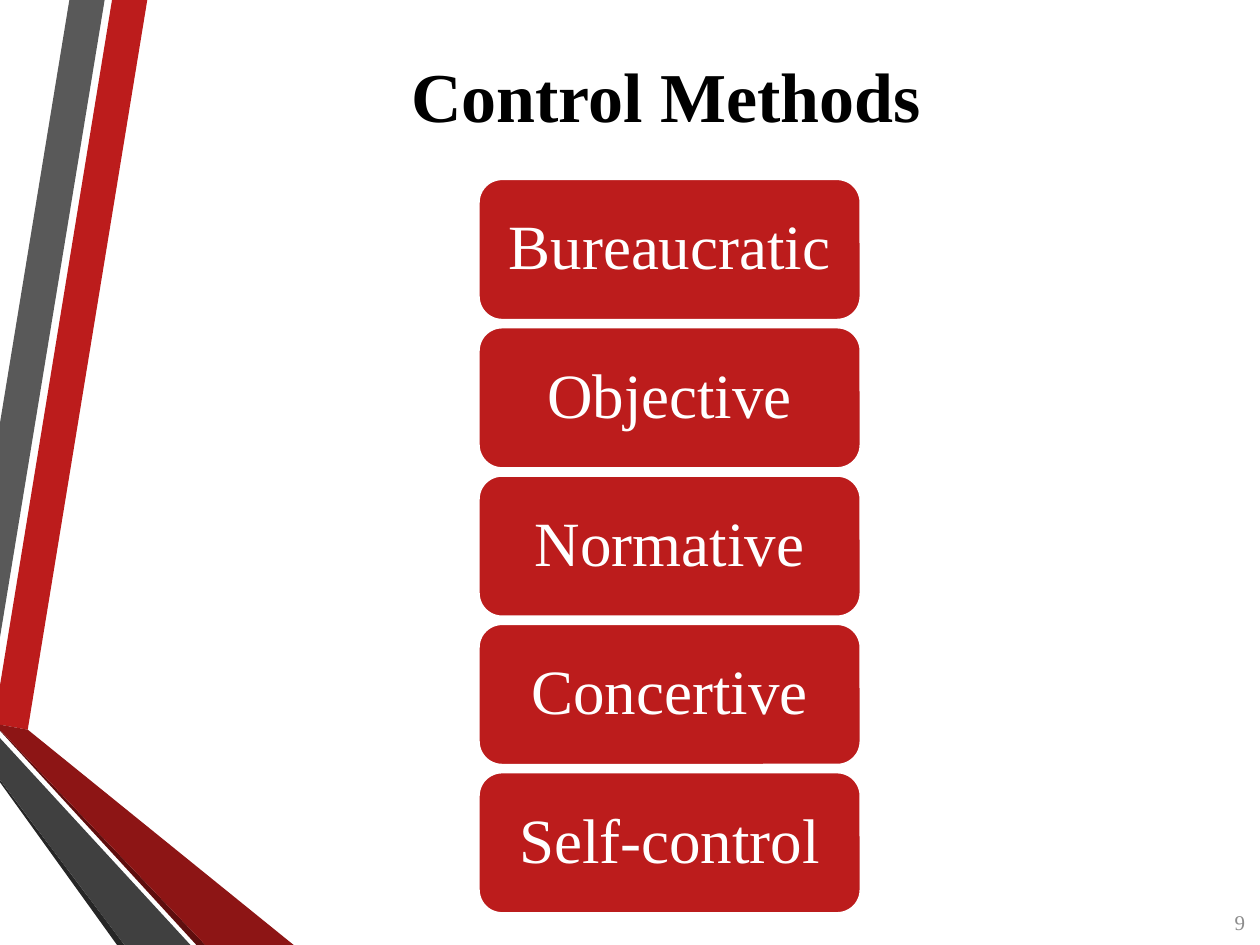
from pptx import Presentation
from pptx.dml.color import RGBColor
from pptx.enum.shapes import MSO_SHAPE
from pptx.enum.text import MSO_ANCHOR, PP_ALIGN
from pptx.util import Cm, Pt

ROUNDED = MSO_SHAPE.ROUNDED_RECTANGLE
MIDDLE = MSO_ANCHOR.MIDDLE
CENTER, RIGHT = PP_ALIGN.CENTER, PP_ALIGN.RIGHT

COLORS = {
    "red": "BC1C1C",
    "dark red": "8D1515",
    "deep red": "5E0E0E",
    "grey": "595959",
    "dark grey": "404040",
    "deep grey": "262626",
    "page grey": "8C8C8C",
    "black": "000000",
    "white": "FFFFFF",
}

RIBBONS = [
    ("red", [(0, 13.82), (0, 14.61), (0.56, 14.71), (2.97, 0), (2.26, 0)]),
    ("grey", [(2.11, 0), (1.4, 0), (0, 8.53), (0, 12.85)]),
    ("deep grey", [(0, 15.72), (0, 15.77), (2.36, 19.05), (2.51, 19.05)]),
    ("deep red", [(0, 14.71), (0, 14.73), (3.96, 19.05), (4.14, 19.05)]),
    ("dark red", [(0, 14.71), (4.14, 19.05), (5.92, 19.05), (0.56, 14.71), (0, 14.61)]),
    ("dark grey", [(0, 15.72), (2.51, 19.05), (3.84, 19.05), (0, 14.88)]),
]
METHODS = ["Bureaucratic", "Objective", "Normative", "Concertive", "Self-control"]
FIRST_TOP, PITCH = 3.61, 2.99


def color(name):
    return RGBColor.from_string(COLORS[name])


def write(frame, text, *, font, size, ink, align=CENTER, bold=False, spacing=1.0):
    frame.word_wrap = True
    frame.vertical_anchor = MIDDLE
    paragraph = frame.paragraphs[0]
    paragraph.alignment = align
    paragraph.line_spacing = spacing
    run = paragraph.add_run()
    run.text = text
    run.font.name = font
    run.font.size = Pt(size)
    run.font.bold = bold
    run.font.color.rgb = color(ink)


class SlideBuilder:
    """Holds the slide being drawn and its shared style."""

    font = "Times New Roman"

    def __init__(self, slide):
        self.slide = slide

    def ribbon(self, fill, corners):
        start, *rest = [(Cm(x), Cm(y)) for x, y in corners]
        outline = self.slide.shapes.build_freeform(*start)
        outline.add_line_segments(rest, close=True)
        band = outline.convert_to_shape()
        band.shadow.inherit = False
        band.fill.solid()
        band.fill.fore_color.rgb = color(fill)
        band.line.fill.background()

    def label(self, text, left, top, width, height, **style):
        box = self.slide.shapes.add_textbox(Cm(left), Cm(top), Cm(width), Cm(height))
        write(box.text_frame, text, font=self.font, **style)

    def method(self, name, top):
        card = self.slide.shapes.add_shape(ROUNDED, Cm(9.65), Cm(top), Cm(7.7), Cm(2.84))
        card.shadow.inherit = False
        card.fill.solid()
        card.fill.fore_color.rgb = color("red")
        card.line.color.rgb = color("white")
        card.line.width = Pt(1.25)
        frame = card.text_frame
        frame.margin_left = frame.margin_right = Cm(0.2)
        frame.margin_top = frame.margin_bottom = Cm(0.18)
        write(frame, name, font=self.font, size=36, ink="white", spacing=0.9)


def main():
    deck = Presentation()
    deck.slide_width, deck.slide_height = Cm(25.4), Cm(19.05)
    builder = SlideBuilder(deck.slides.add_slide(deck.slide_layouts[6]))
    for fill, corners in RIBBONS:
        builder.ribbon(fill, corners)
    builder.label("Control Methods", 2.72, 0.64, 21.41, 2.54, size=40, ink="black", bold=True)
    for row, name in enumerate(METHODS):
        builder.method(name, FIRST_TOP + row * PITCH)
    builder.label("9", 19.63, 18.08, 5.72, 1.02, size=12, ink="page grey", align=RIGHT)
    deck.save("out.pptx")


if __name__ == "__main__":
    main()
